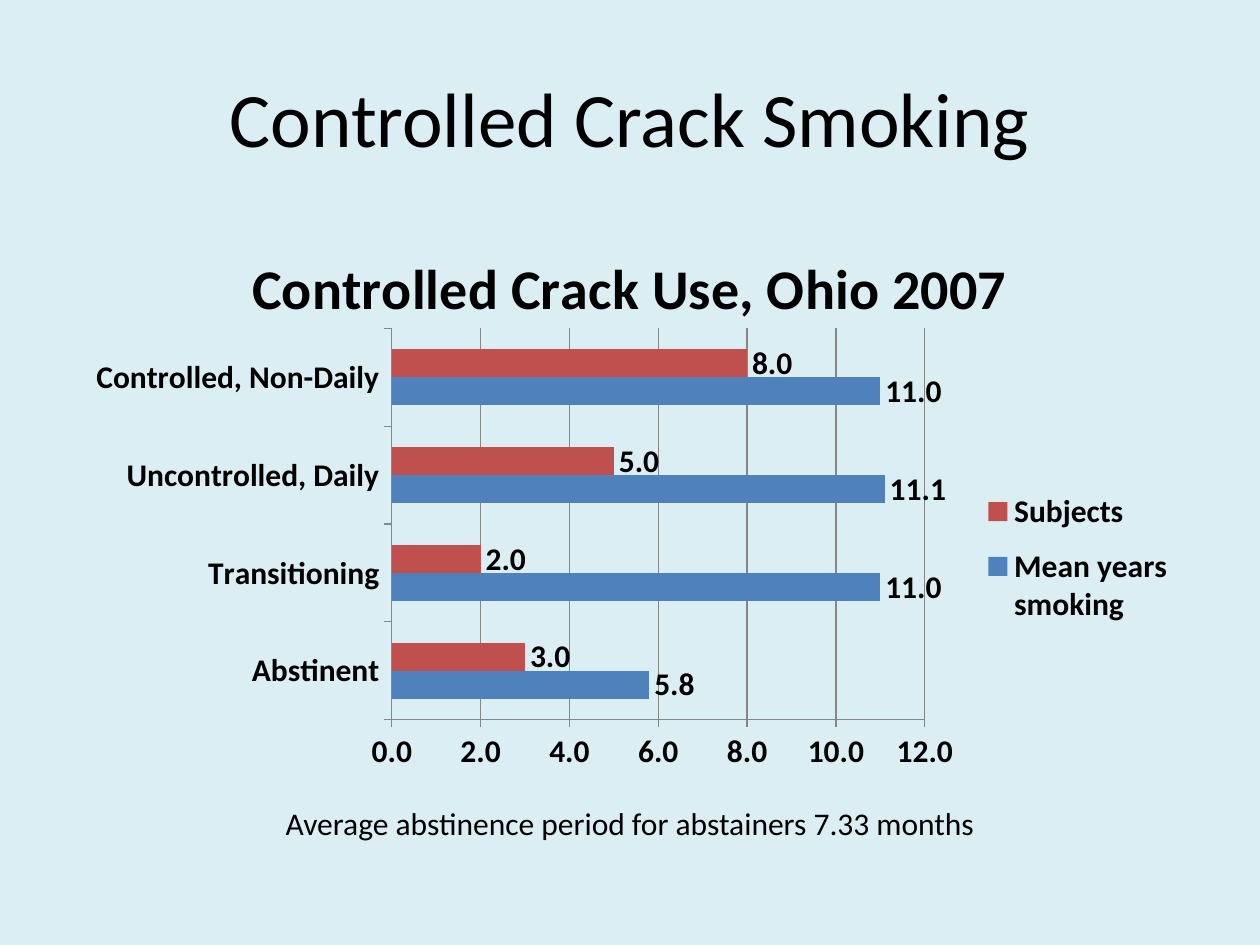
import pptx
import pptx.chart.data
import pptx.dml.color
import pptx.enum.chart
import pptx.enum.text
import pptx.oxml
import pptx.oxml.ns
import pptx.util
from pptx.util import Cm, Pt

TITLE = "Controlled Crack Smoking"
CHART_TITLE = "Controlled Crack Use, Ohio 2007"
FOOTNOTE = "Average abstinence period for abstainers 7.33 months"
GROUPS = ["Abstinent", "Transitioning", "Uncontrolled, Daily", "Controlled, Non-Daily"]
SERIES = [
    ("Mean years smoking", "blue", (5.8, 11, 11.1, 11)),
    ("Subjects", "red", (3, 2, 5, 8)),
]
COLORS = {
    "background": "DBEEF4",
    "text": "000000",
    "blue": "4F81BD",
    "red": "C0504D",
    "axis": "868686",
}
FONT = "Calibri"
NUMBER_FORMAT = "0.0"
PLOT_AREA = {"x": 0.29, "y": 0.19, "w": 0.47, "h": 0.69}
LEGEND_AREA = {"x": 0.8, "y": 0.45, "w": 0.19, "h": 0.29}


def color(name):
    return pptx.dml.color.RGBColor.from_string(COLORS[name])


def format_font(font, size, bold=False):
    font.name = FONT
    font.size = Pt(size)
    font.bold = bold
    font.color.rgb = color("text")


def format_line(line):
    line.color.rgb = color("axis")
    line.width = Pt(0.75)


def place_chart_part(part, area, index, target=""):
    """Fix a chart part at fractions of the chart frame; index is the layout's place in the XML."""
    for old_layout in part.findall(pptx.oxml.ns.qn("c:layout")):
        part.remove(old_layout)
    sizes = "".join(f'<c:{key} val="{value}"/>' for key, value in area.items())
    part.insert(index, pptx.oxml.parse_xml(
        f'<c:layout {pptx.oxml.ns.nsdecls("c")}><c:manualLayout>{target}'
        f'<c:xMode val="edge"/><c:yMode val="edge"/>{sizes}'
        '</c:manualLayout></c:layout>'))


def add_title(slide):
    title = slide.shapes.title
    title.left, title.top, title.width, title.height = Cm(1.27), Cm(0.76), Cm(22.86), Cm(3.18)
    frame = title.text_frame
    frame.text = TITLE
    frame.vertical_anchor = pptx.enum.text.MSO_ANCHOR.MIDDLE
    frame.paragraphs[0].alignment = pptx.enum.text.PP_ALIGN.CENTER
    format_font(frame.paragraphs[0].runs[0].font, 44)


def add_usage_chart(slide):
    data = pptx.chart.data.CategoryChartData(number_format=NUMBER_FORMAT)
    data.categories = GROUPS
    for name, _, values in SERIES:
        data.add_series(name, values)
    chart = slide.shapes.add_chart(
        pptx.enum.chart.XL_CHART_TYPE.BAR_CLUSTERED,
        Cm(1.27), Cm(4.45), Cm(22.86), Cm(11.43), data).chart
    format_font(chart.font, 18, bold=True)

    chart.has_title = True
    heading = chart.chart_title.text_frame
    heading.text = CHART_TITLE
    format_font(heading.paragraphs[0].runs[0].font, 32, bold=True)
    chart.chart_title.include_in_layout = False

    chart.has_legend = True
    chart.legend.position = pptx.enum.chart.XL_LEGEND_POSITION.RIGHT
    chart.legend.include_in_layout = False
    place_chart_part(chart.legend._element, LEGEND_AREA, 1)

    for axis in (chart.category_axis, chart.value_axis):
        axis.major_tick_mark = pptx.enum.chart.XL_TICK_MARK.OUTSIDE
        format_line(axis.format.line)
    value_axis = chart.value_axis
    value_axis.minimum_scale, value_axis.maximum_scale, value_axis.major_unit = 0, 12, 2
    value_axis.has_major_gridlines = True
    format_line(value_axis.major_gridlines.format.line)
    value_axis.tick_labels.number_format = NUMBER_FORMAT
    value_axis.tick_labels.number_format_is_linked = False

    plot = chart.plots[0]
    plot.gap_width = 150
    plot.vary_by_categories = False
    for series, (_, fill_name, _) in zip(plot.series, SERIES):
        series.format.fill.solid()
        series.format.fill.fore_color.rgb = color(fill_name)
        labels = series.data_labels
        labels.show_value = True
        labels.number_format = NUMBER_FORMAT
        labels.number_format_is_linked = False
        labels.position = pptx.enum.chart.XL_LABEL_POSITION.OUTSIDE_END
        format_font(labels.font, 18, bold=True)
    place_chart_part(plot._element.getparent(), PLOT_AREA, 0, '<c:layoutTarget val="inner"/>')


def add_footnote(slide):
    frame = slide.shapes.add_textbox(Cm(5.51), Cm(16.08), Cm(15.04), Cm(1.02)).text_frame
    frame.word_wrap = True
    frame.text = FOOTNOTE
    format_font(frame.paragraphs[0].runs[0].font, 18)


def main():
    presentation = pptx.Presentation()
    presentation.slide_width, presentation.slide_height = Cm(25.4), Cm(19.05)
    slide = presentation.slides.add_slide(presentation.slide_layouts[5])
    slide.background.fill.solid()
    slide.background.fill.fore_color.rgb = color("background")
    add_title(slide)
    add_usage_chart(slide)
    add_footnote(slide)
    presentation.save("out.pptx")


if __name__ == "__main__":
    main()
